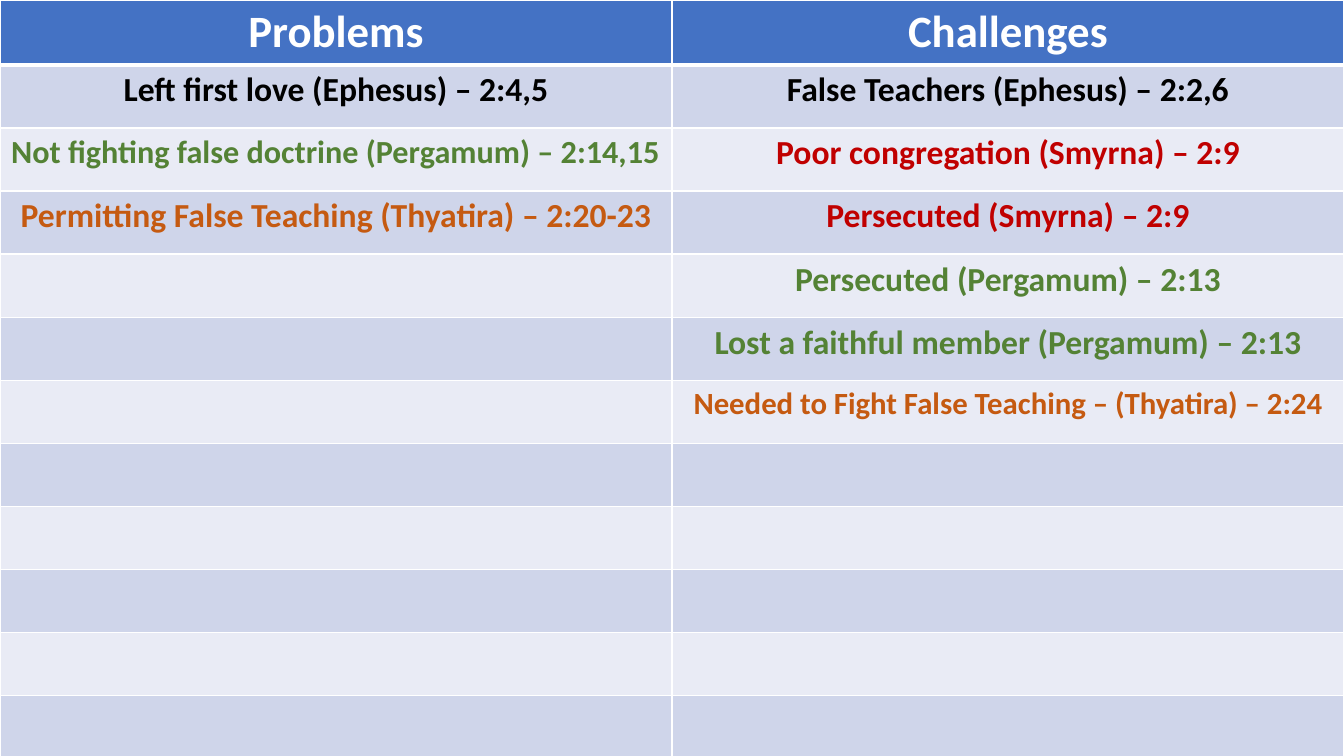
from dataclasses import dataclass
from itertools import zip_longest

from lxml import etree
from pptx import Presentation
from pptx.dml.color import RGBColor
from pptx.enum import text
from pptx.oxml.ns import qn
from pptx.table import _Cell
from pptx.util import Inches, Pt


@dataclass(frozen=True)
class Theme:
    font: str = "Calibri"
    header_fill: str = "4472C4"
    bands: tuple[str, str] = ("CFD5EA", "E9EBF5")
    white: str = "FFFFFF"
    ephesus: str = "000000"
    smyrna: str = "C00000"
    pergamum: str = "548235"
    thyatira: str = "C55A11"
    header_size: int = 32
    body_size: int = 24
    snug_size: int = 23
    small_size: int = 22
    border: int = 1
    header_rule: int = 3


THEME = Theme()


@dataclass(frozen=True)
class Entry:
    text: str
    color: str
    size: int = THEME.body_size


PROBLEMS = [
    Entry("Problems", THEME.white, THEME.header_size),
    Entry("Left first love (Ephesus) – 2:4,5", THEME.ephesus),
    Entry("Not fighting false doctrine (Pergamum) – 2:14,15", THEME.pergamum, THEME.snug_size),
    Entry("Permitting False Teaching (Thyatira) – 2:20-23", THEME.thyatira),
]
CHALLENGES = [
    Entry("Challenges", THEME.white, THEME.header_size),
    Entry("False Teachers (Ephesus) – 2:2,6", THEME.ephesus),
    Entry("Poor congregation (Smyrna) – 2:9", THEME.smyrna),
    Entry("Persecuted (Smyrna) – 2:9", THEME.smyrna),
    Entry("Persecuted (Pergamum) – 2:13", THEME.pergamum),
    Entry("Lost a faithful member (Pergamum) – 2:13", THEME.pergamum),
    Entry("Needed to Fight False Teaching – (Thyatira) – 2:24", THEME.thyatira, THEME.small_size),
]
ROWS = 12
WIDTH, HEIGHT = Inches(13.33), Inches(7.5)
TABLE_HEIGHT = Inches(7.51)


def set_borders(cell: _Cell, row: int) -> None:
    """Rule all four sides, with a heavier line below the header."""
    widths = {
        "L": THEME.border,
        "R": THEME.border,
        "T": THEME.header_rule if row == 1 else THEME.border,
        "B": THEME.header_rule if row == 0 else THEME.border,
    }
    tc_pr = cell._tc.get_or_add_tcPr()
    for i, (side, width) in enumerate(widths.items()):
        ln = etree.Element(qn(f"a:ln{side}"), w=str(Pt(width)))
        fill = etree.SubElement(ln, qn("a:solidFill"))
        etree.SubElement(fill, qn("a:srgbClr"), val=THEME.white)
        tc_pr.insert(i, ln)


def write_entry(cell: _Cell, entry: Entry) -> None:
    p = cell.text_frame.paragraphs[0]
    p.alignment = text.PP_ALIGN.CENTER
    r = p.add_run()
    r.text = entry.text
    r.font.name = THEME.font
    r.font.size = Pt(entry.size)
    r.font.bold = True
    r.font.color.rgb = RGBColor.from_string(entry.color)


def style_cell(cell: _Cell, row: int) -> None:
    color = THEME.bands[(row - 1) % 2] if row else THEME.header_fill
    cell.fill.solid()
    cell.fill.fore_color.rgb = RGBColor.from_string(color)
    set_borders(cell, row)


def main() -> None:
    prs = Presentation()
    prs.slide_width, prs.slide_height = WIDTH, HEIGHT
    s = prs.slides.add_slide(prs.slide_layouts[6])
    table = s.shapes.add_table(ROWS, 2, 0, 0, WIDTH, TABLE_HEIGHT).table

    entries = list(zip_longest(PROBLEMS, CHALLENGES))
    for row in range(ROWS):
        pair = entries[row] if row < len(entries) else (None, None)
        for col, entry in enumerate(pair):
            cell = table.cell(row, col)
            style_cell(cell, row)
            if entry:
                write_entry(cell, entry)

    prs.save("out.pptx")


if __name__ == "__main__":
    main()
